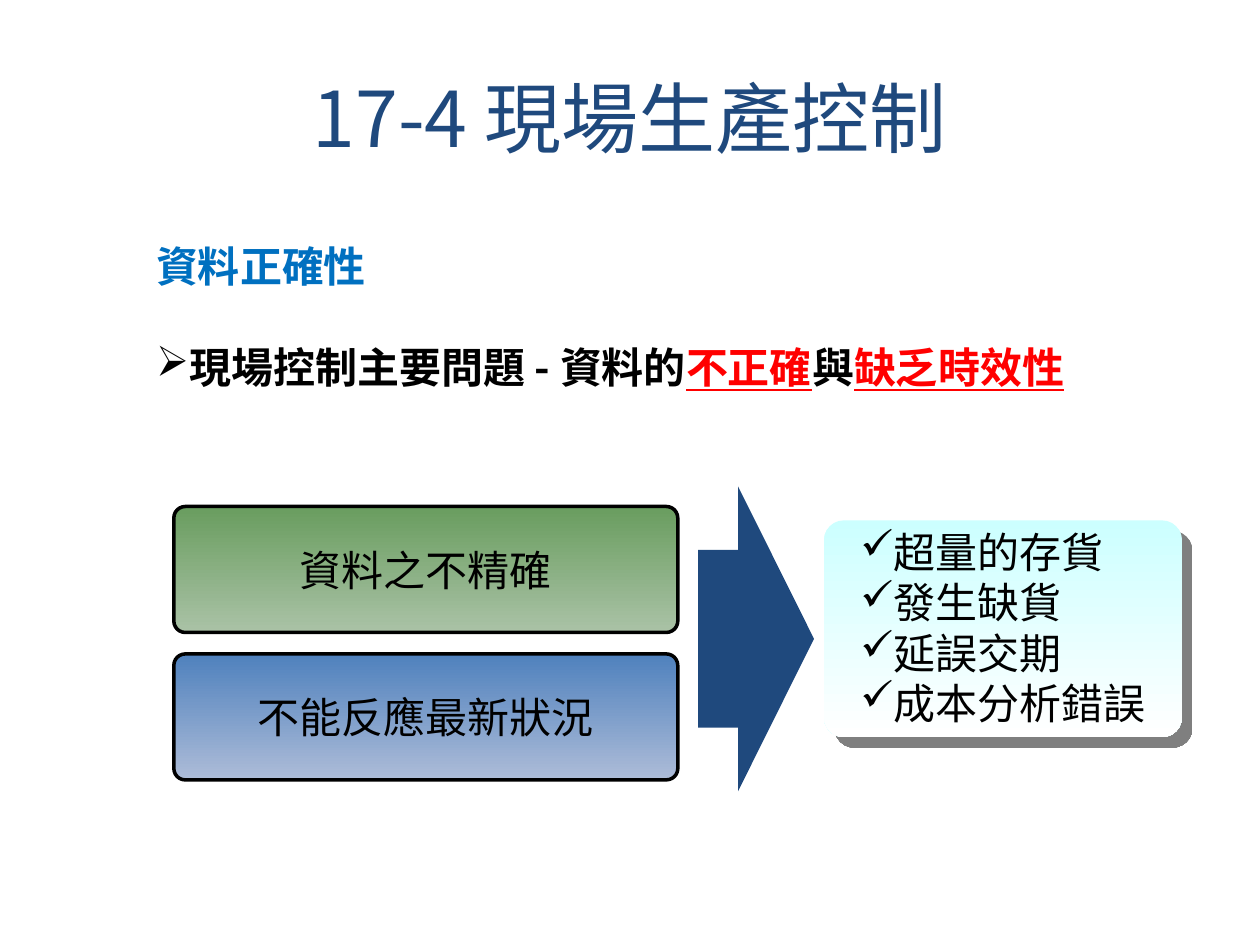
import pptx
import pptx.util
import pptx.dml.color
import pptx.enum.shapes
import pptx.enum.text
from lxml import etree

FONT = "Noto Sans CJK SC"
NAVY, BLUE, BLACK, RED = "1F497D", "0070C0", "000000", "FF0000"
SHAPE = pptx.enum.shapes.MSO_SHAPE
ALIGN = pptx.enum.text.PP_ALIGN
ANCHOR = pptx.enum.text.MSO_ANCHOR
A = "http://schemas.openxmlformats.org/drawingml/2006/main"
LINE = 28.8  # line pitch of the 24 pt text
CAUSES = [("資料之不精確", "699D5F", "AAC2A6"),
          ("不能反應最新狀況", "4F81BD", "ADBCD8")]
EFFECTS = ["超量的存貨", "發生缺貨", "延誤交期", "成本分析錯誤"]


def rgb(value):
    return pptx.dml.color.RGBColor.from_string(value)


def box(lengths):
    return [pptx.util.Inches(v) for v in lengths]


def sub(parent, tag, **attributes):
    return etree.SubElement(parent, f"{{{A}}}{tag}", attributes)


def add_run(p, text, size=24, color=BLACK, bold=False, underline=False):
    r = p.add_run()
    r.text = text
    r.font.size = pptx.util.Pt(size)
    r.font.name = FONT
    r.font.bold = bold
    r.font.underline = underline
    r.font.color.rgb = rgb(color)
    sub(r.font._element, "ea", typeface=FONT)


def add_paragraph(tf, runs, first=False, align=ALIGN.LEFT, bullet=None,
                  pitch=None, before=0):
    """Runs are (text, format) pairs."""
    p = tf.paragraphs[0] if first else tf.add_paragraph()
    p.alignment = align
    p.space_before = pptx.util.Pt(before)
    if pitch:
        p.line_spacing = pptx.util.Pt(pitch)
    if bullet:
        sub(p._p.get_or_add_pPr(), "buChar", char=bullet)
    for text, style in runs:
        add_run(p, text, **style)


def add_text_box(s, at, anchor=ANCHOR.TOP):
    tf = s.shapes.add_textbox(*box(at)).text_frame
    tf.word_wrap = True
    tf.vertical_anchor = anchor
    return tf


def add_block(s, kind, at, fill, adjust, line=None):
    """Fill is one colour, or a (top, bottom) pair for a gradient."""
    sp = s.shapes.add_shape(kind, *box(at))
    sp.shadow.inherit = False
    for i, value in enumerate(adjust):
        sp.adjustments[i] = value
    if isinstance(fill, str):
        sp.fill.solid()
        sp.fill.fore_color.rgb = rgb(fill)
    else:
        sp.fill.gradient()
        sp.fill.gradient_angle = 270
        for stop, color in zip(sp.fill.gradient_stops, fill):
            stop.color.rgb = rgb(color)
    if line:
        sp.line.color.rgb = rgb(line)
        sp.line.width = pptx.util.Pt(2)
    else:
        sp.line.fill.background()
    return sp


def add_shadow(sp, distance):
    effects = sp._element.spPr.find(f"{{{A}}}effectLst")
    shadow = sub(effects, "outerShdw", blurRad="0", algn="ctr", rotWithShape="0",
                 dist=str(pptx.util.Pt(distance)), dir=str(45 * 60000))
    sub(sub(shadow, "srgbClr", val=BLACK), "alpha", val="50000")


def main():
    prs = pptx.Presentation()
    prs.slide_width, prs.slide_height = box((10, 7.5))
    s = prs.slides.add_slide(prs.slide_layouts[6])

    # Title
    tf = add_text_box(s, (0.5, 0.3, 9, 1.25), ANCHOR.MIDDLE)
    add_paragraph(tf, [("17-4 現場生產控制", dict(size=44, color=NAVY))],
                  first=True, align=ALIGN.CENTER)

    # Topic and main problem
    tf = add_text_box(s, (1.14, 1.86, 7.73, 1.31))
    plain = dict(bold=True)
    key = dict(bold=True, color=RED, underline=True)
    add_paragraph(tf, [("資料正確性", dict(bold=True, color=BLUE))],
                  first=True, pitch=LINE)
    add_paragraph(tf, [("現場控制主要問題 - 資料的", plain), ("不正確", key),
                       ("與", plain), ("缺乏時效性", key)],
                  bullet="➢", pitch=LINE, before=LINE)

    # Arrow from causes to effects
    add_block(s, SHAPE.RIGHT_ARROW, (5.54, 3.86, 0.92, 2.42), NAVY, (0.583, 0.655))

    # Causes
    for row, (text, top, bottom) in enumerate(CAUSES):
        sp = add_block(s, SHAPE.ROUNDED_RECTANGLE, (1.38, 4.02 + 1.17 * row, 4, 1),
                       (top, bottom), (0.091,), line=BLACK)
        tf = sp.text_frame
        tf.word_wrap = False
        tf.vertical_anchor = ANCHOR.MIDDLE
        add_paragraph(tf, [(text, {})], first=True, align=ALIGN.CENTER)

    # Effects
    panel = add_block(s, SHAPE.ROUNDED_RECTANGLE, (6.54, 4.13, 2.84, 1.72),
                      ("CCFFFF", "FFFFFF"), (0.091,))
    add_shadow(panel, 8.5)
    tf = add_text_box(s, (6.73, 4.13, 2.66, 1.72))
    for i, text in enumerate(EFFECTS):
        add_paragraph(tf, [(text, {})], first=i == 0, bullet="✓", pitch=LINE)

    prs.save("out.pptx")


if __name__ == "__main__":
    main()
